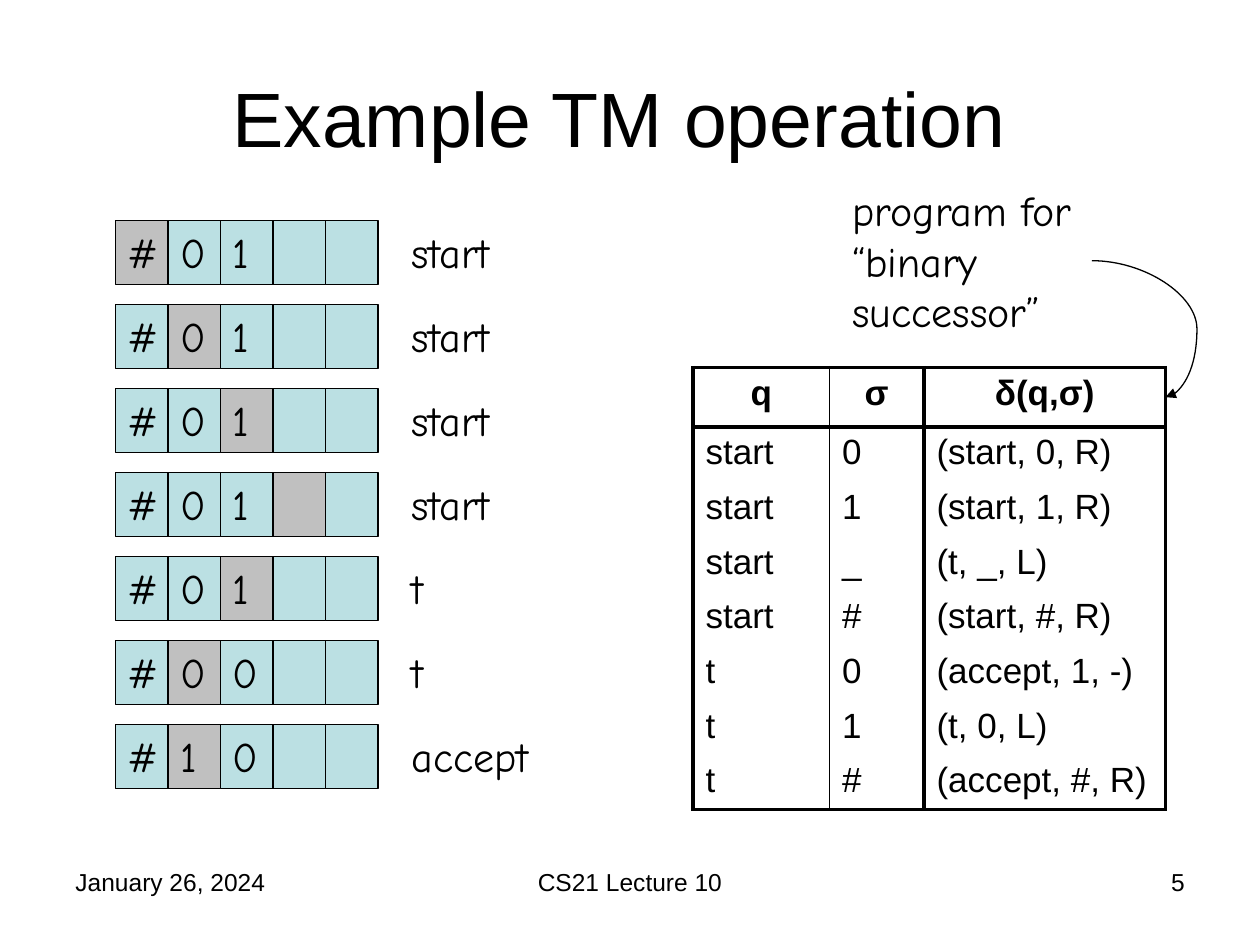
from lxml import etree
from pptx import Presentation
from pptx.dml.color import RGBColor
from pptx.enum import shapes, text
from pptx.oxml import ns
from pptx.util import Pt

BLACK = RGBColor(0, 0, 0)
GREY = RGBColor(0xC0, 0xC0, 0xC0)
TEAL = RGBColor(0xBB, 0xE0, 0xE3)
SANS, HAND = "Arial", "Comic Neue"
LEFT, CENTER, RIGHT = text.PP_ALIGN.LEFT, text.PP_ALIGN.CENTER, text.PP_ALIGN.RIGHT


def write(frame, words, font, size, align=LEFT, bold=False):
    frame.word_wrap = True
    frame.text = words
    paragraph = frame.paragraphs[0]
    paragraph.alignment = align
    paragraph.font.name = font
    paragraph.font.size = Pt(size)
    paragraph.font.bold = bold
    paragraph.font.color.rgb = BLACK


def set_border(cell, side, width):
    properties = cell._tc.get_or_add_tcPr()
    line = etree.SubElement(properties, ns.qn(f"a:ln{side}"), w=str(Pt(width)))
    if width:
        fill = etree.SubElement(line, ns.qn("a:solidFill"))
        etree.SubElement(fill, ns.qn("a:srgbClr"), val=str(BLACK))
    else:
        etree.SubElement(line, ns.qn("a:noFill"))


presentation = Presentation()
presentation.slide_width, presentation.slide_height = Pt(720), Pt(540)
slide = presentation.slides.add_slide(presentation.slide_layouts[5])

# Title; its trailing space is part of the centred line
title = slide.shapes.title
title.left, title.top, title.width, title.height = Pt(36), Pt(21.6), Pt(648), Pt(90)
title.text_frame.vertical_anchor = text.MSO_ANCHOR.MIDDLE
write(title.text_frame, "Example TM operation ", SANS, 44, CENTER)

# Tape after each step: symbols, head position, state
steps = [
    ("#01", 0, "start"),
    ("#01", 1, "start"),
    ("#01", 2, "start"),
    ("#01", 3, "start"),
    ("#01", 2, "t"),
    ("#00", 1, "t"),
    ("#10", 1, "accept"),
]
for step, (symbols, head, state) in enumerate(steps):
    top = Pt(126 + 48 * step)
    for position, symbol in enumerate(symbols.ljust(5)):
        square = slide.shapes.add_shape(
            shapes.MSO_SHAPE.RECTANGLE, Pt(66 + 30 * position), top, Pt(30), Pt(36.7))
        square.shadow.inherit = False
        square.fill.solid()
        square.fill.fore_color.rgb = GREY if position == head else TEAL
        square.line.color.rgb = BLACK
        square.line.width = Pt(0.75)
        square.text_frame.vertical_anchor = text.MSO_ANCHOR.TOP
        if symbol != " ":
            write(square.text_frame, symbol, HAND, 24)
    label = slide.shapes.add_textbox(Pt(228), top, Pt(90), Pt(36))
    write(label.text_frame, state, HAND, 24)

# Transition table
rows = [
    ("q", "σ", "δ(q,σ)"),
    ("start", "0", "(start, 0, R)"),
    ("start", "1", "(start, 1, R)"),
    ("start", "_", "(t, _, L)"),
    ("start", "#", "(start, #, R)"),
    ("t", "0", "(accept, 1, -)"),
    ("t", "1", "(t, 0, L)"),
    ("t", "#", "(accept, #, R)"),
]
table = slide.shapes.add_table(len(rows), 3, Pt(396), Pt(210), Pt(270), Pt(252.4)).table
table.first_row = table.horz_banding = False
for column, width in zip(table.columns, (78, 54, 138)):
    column.width = Pt(width)
vertical_lines = (2.25, 1, 3, 2.25)
horizontal_lines = [2.25, 3] + [0] * (len(rows) - 2) + [2.25]
for r, row in enumerate(rows):
    header = r == 0
    table.rows[r].height = Pt(34 if header else 31.2)
    for c, words in enumerate(row):
        cell = table.cell(r, c)
        write(cell.text_frame, words, SANS, 20, CENTER if header else LEFT, header)
        set_border(cell, "L", vertical_lines[c])
        set_border(cell, "R", vertical_lines[c + 1])
        set_border(cell, "T", horizontal_lines[r])
        set_border(cell, "B", horizontal_lines[r + 1])
        cell.fill.background()

# Caption and curved arrow to the table
caption = slide.shapes.add_textbox(Pt(480), Pt(102), Pt(144), Pt(93.6))
write(caption.text_frame, "program for “binary successor”", HAND, 24)
arrow = slide.shapes.add_connector(
    shapes.MSO_CONNECTOR.CURVE, Pt(624), Pt(149), Pt(666), Pt(227))
arrow.line.color.rgb = BLACK
arrow.line.width = Pt(0.75)
etree.SubElement(arrow.line._get_or_add_ln(), ns.qn("a:tailEnd"), type="triangle")
etree.SubElement(arrow._element.spPr, ns.qn("a:effectLst"))
adjustments = arrow._element.spPr.find(ns.qn("a:prstGeom")).get_or_add_avLst()
etree.SubElement(adjustments, ns.qn("a:gd"), name="adj1", fmla="val 142900")

# Footer
for left, width, words, align in [
    (36, 168, "January 26, 2024", LEFT),
    (246, 228, "CS21 Lecture 10", CENTER),
    (516, 168, "5", RIGHT),
]:
    footer = slide.shapes.add_textbox(Pt(left), Pt(492), Pt(width), Pt(37.5))
    write(footer.text_frame, words, SANS, 14, align)

presentation.save("out.pptx")
